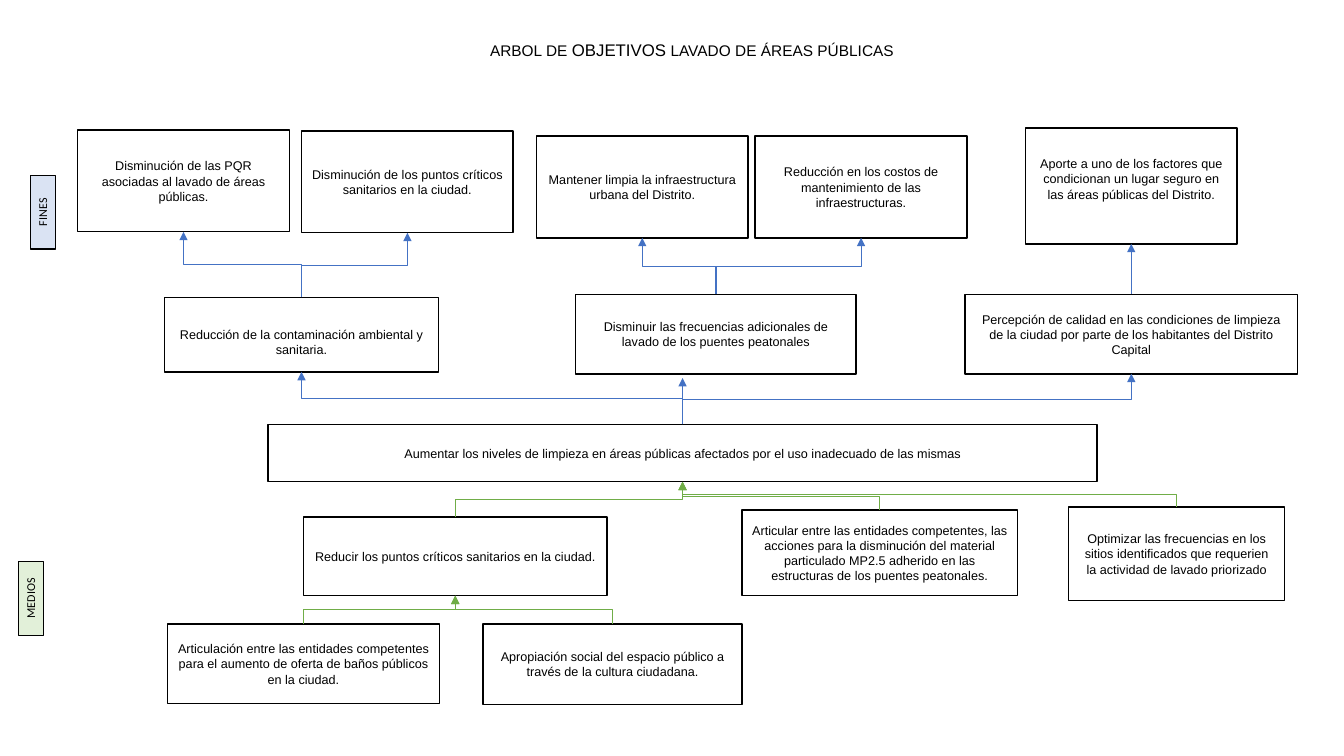
"""Build the objective tree slide for the washing of public areas."""
from dataclasses import dataclass
from typing import Any

from lxml.etree import SubElement
from pptx import Presentation
from pptx.dml.color import RGBColor
from pptx.enum.shapes import MSO_CONNECTOR, MSO_SHAPE
from pptx.enum.text import MSO_ANCHOR, MSO_AUTO_SIZE, PP_ALIGN
from pptx.oxml.ns import qn
from pptx.util import Inches, Pt

BLACK = RGBColor(0x00, 0x00, 0x00)
WHITE = RGBColor(0xFF, 0xFF, 0xFF)
BLUE = RGBColor(0x44, 0x72, 0xC4)
GREEN = RGBColor(0x70, 0xAD, 0x47)
PALE_BLUE = RGBColor(0xDA, 0xE3, 0xF3)
PALE_GREEN = RGBColor(0xE2, 0xF0, 0xD9)

BOX_FONT = {"name": "Arial", "size": Pt(9)}
TAG_FONT = {"name": "Calibri", "size": Pt(8.6)}
BOX_FRAME = {"word_wrap": True, "vertical_anchor": MSO_ANCHOR.MIDDLE}
TAG_FRAME = {"word_wrap": True, "vertical_anchor": MSO_ANCHOR.TOP,
             "auto_size": MSO_AUTO_SIZE.SHAPE_TO_FIT_TEXT}
LOWER = {"margin_top": Inches(0.19)}
RAISE = {"margin_bottom": Inches(0.19)}


@dataclass(frozen=True)
class Box:
    left: float
    top: float
    width: float
    height: float
    text: str

    @property
    def mid(self) -> float:
        return self.left + self.width / 2

    @property
    def base(self) -> float:
        return self.top + self.height


@dataclass(frozen=True)
class Link:
    start: str
    end: str
    tint: RGBColor


BOXES = {
    "goal": Box(2.66, 4.21, 8.22, 0.57, "Aumentar los niveles de limpieza en áreas públicas "
                "afectados por el uso inadecuado de las mismas"),
    "reduce": Box(3.01, 5.13, 3.01, 0.78, "Reducir los puntos críticos sanitarios en la ciudad."),
    "dust": Box(7.36, 5.06, 2.73, 0.85, "Articular entre las entidades competentes, las acciones "
                "para la disminución del material particulado MP2.5 adherido en las estructuras "
                "de los puentes peatonales."),
    "tune": Box(10.6, 5.03, 2.14, 0.93, "Optimizar las frecuencias en los sitios identificados "
                "que requerien la actividad de lavado priorizado"),
    "clean": Box(1.63, 2.95, 2.72, 0.74, "Reducción de la contaminación ambiental y sanitaria."),
    "claims": Box(0.77, 1.29, 2.1, 1.01, "Disminución de las PQR asociadas al lavado de áreas "
                  "públicas."),
    "spots": Box(2.99, 1.3, 2.1, 1.01, "Disminución de los puntos críticos sanitarios en la "
                 "ciudad."),
    "bridge": Box(5.71, 2.92, 2.78, 0.79, "Disminuir las frecuencias adicionales de lavado de "
                  "los puentes peatonales"),
    "urban": Box(5.32, 1.35, 2.1, 1.01, "Mantener limpia la infraestructura urbana del Distrito."),
    "costs": Box(7.49, 1.35, 2.1, 1.01, "Reducción en los costos de mantenimiento de "
                 "las infraestructuras."),
    "trust": Box(9.57, 2.92, 3.3, 0.79, "Percepción de calidad en las condiciones de limpieza de "
                 "la ciudad por parte de los habitantes del Distrito Capital"),
    "safe": Box(10.17, 1.27, 2.1, 1.15, "Aporte a uno de los factores que condicionan un lugar "
                "seguro en las áreas públicas del Distrito."),
    "baths": Box(1.66, 6.19, 2.7, 0.79, "Articulación entre las entidades competentes para el "
                 "aumento de oferta de baños públicos en la ciudad."),
    "culture": Box(4.79, 6.19, 2.57, 0.8, "Apropiación social del espacio público a través de la "
                   "cultura ciudadana."),
}
SHIFTS = {"clean": LOWER, "safe": RAISE}
BENDS = (
    Link("clean", "claims", BLUE), Link("clean", "spots", BLUE),
    Link("bridge", "urban", BLUE), Link("bridge", "costs", BLUE),
    Link("goal", "clean", BLUE), Link("goal", "trust", BLUE),
    Link("reduce", "goal", GREEN), Link("dust", "goal", GREEN),
    Link("tune", "goal", GREEN), Link("baths", "reduce", GREEN),
    Link("culture", "reduce", GREEN),
)
TAGS = (
    (Box(-0.06, 5.81, 0.73, 0.25, "MEDIOS"), PALE_GREEN),
    (Box(0.06, 1.98, 0.73, 0.25, "FINES"), PALE_BLUE),
)
TITLE = Box(2.18, 0.35, 9.37, 0.3, "")
TITLE_RUNS = (("ARBOL DE ", 11), ("OBJETIVOS", 12), (" LAVADO DE ÁREAS PÚBLICAS", 11))


def apply(target: Any, values: dict[str, Any]) -> None:
    for name, value in values.items():
        setattr(target, name, value)


def write(part: Any, text: str, font: dict[str, Any]) -> None:
    part.alignment = PP_ALIGN.CENTER
    run = part.add_run()
    run.text = text
    apply(run.font, font)
    run.font.color.rgb = BLACK


def draw_box(slide: Any, box: Box, fill: RGBColor, edge: float,
             font: dict[str, Any], frame: dict[str, Any]) -> Any:
    shape = slide.shapes.add_shape(
        MSO_SHAPE.RECTANGLE, *map(Inches, (box.left, box.top, box.width, box.height)))
    shape.shadow.inherit = False
    shape.fill.solid()
    shape.fill.fore_color.rgb = fill
    shape.line.color.rgb = BLACK
    shape.line.width = Pt(edge)
    apply(shape.text_frame, frame)
    write(shape.text_frame.paragraphs[0], box.text, font)
    return shape


def style_link(line: Any, tint: RGBColor) -> None:
    line.line.color.rgb = tint
    line.line.width = Pt(0.5)
    props = line.element.spPr
    SubElement(props.find(qn("a:ln")), qn("a:tailEnd"), type="triangle")
    SubElement(props, qn("a:effectLst"))


def draw_bend(slide: Any, start: Box, end: Box, tint: RGBColor) -> None:
    rise, span = start.top - end.base, abs(end.mid - start.mid)
    left = (start.mid + end.mid - rise) / 2
    top = (start.top + end.base - span) / 2
    near, far = left, left + rise
    turn = 270
    if end.mid > start.mid:
        near, far, turn = far, near, 90
    line = slide.shapes.add_connector(
        MSO_CONNECTOR.ELBOW, *map(Inches, (near, top + span, far, top)))
    line.element.spPr.find(qn("a:xfrm")).set("rot", str(turn * 60000))
    style_link(line, tint)


def draw_rise(slide: Any, start: Box, top: float, tint: RGBColor) -> Any:
    line = slide.shapes.add_connector(
        MSO_CONNECTOR.STRAIGHT, *map(Inches, (start.mid, start.top, start.mid, top)))
    style_link(line, tint)
    return line


def draw_title(slide: Any) -> None:
    label = slide.shapes.add_textbox(
        *map(Inches, (TITLE.left, TITLE.top, TITLE.width, TITLE.height)))
    apply(label.text_frame, TAG_FRAME)
    for text, size in TITLE_RUNS:
        write(label.text_frame.paragraphs[0], text, {"name": "Arial", "size": Pt(size)})


def main() -> None:
    deck = Presentation()
    apply(deck, {"slide_width": Inches(13.33), "slide_height": Inches(7.5)})
    slide = deck.slides.add_slide(deck.slide_layouts[6])
    draw_title(slide)
    shapes = {
        name: draw_box(slide, box, WHITE, 1, BOX_FONT, BOX_FRAME | SHIFTS.get(name, {}))
        for name, box in BOXES.items()
    }
    for link in BENDS:
        draw_bend(slide, BOXES[link.start], BOXES[link.end], link.tint)
    climb = draw_rise(slide, BOXES["trust"], BOXES["safe"].base, BLUE)
    climb.begin_connect(shapes["trust"], 0)
    climb.end_connect(shapes["safe"], 2)
    trunk = draw_rise(slide, BOXES["goal"], 3.75, BLUE)
    trunk.begin_connect(shapes["goal"], 0)
    for tag, fill in TAGS:
        draw_box(slide, tag, fill, 0.75, TAG_FONT, TAG_FRAME).rotation = 270
    deck.save("out.pptx")


if __name__ == "__main__":
    main()
